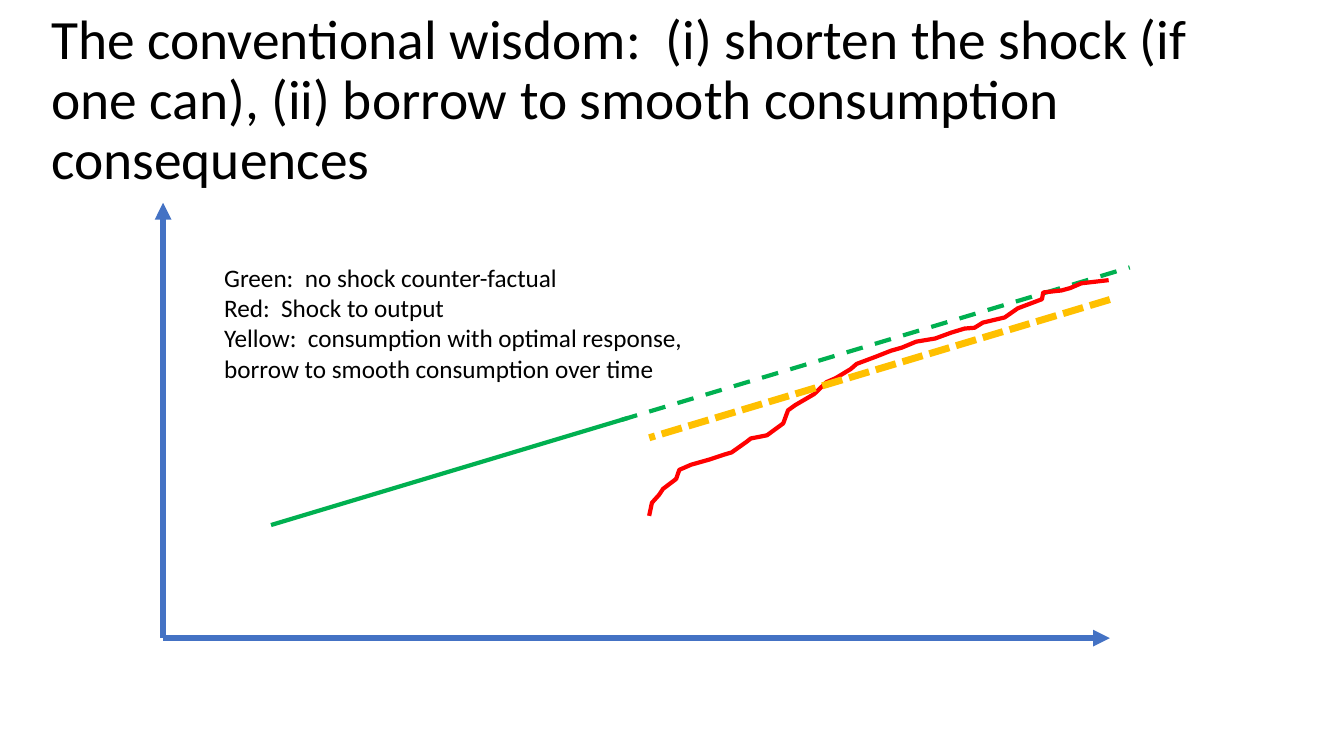
from lxml import etree
from pptx import Presentation, util as u
from pptx.dml.color import RGBColor
from pptx.enum import dml, shapes, text
from pptx.oxml import ns

COLOURS = {"axis": "4472C4", "no_shock": "00B050", "output": "FF0000",
           "consumption": "FFC000", "ink": "000000"}


def style_line(shape, colour, width, dash=None, arrow=False):
    shape.line.color.rgb = RGBColor.from_string(COLOURS[colour])
    shape.line.width = u.Pt(width)
    if dash:
        shape.line.dash_style = dash
    properties = shape._element.spPr
    if arrow:
        stroke = properties.find(ns.qn("a:ln"))
        etree.SubElement(stroke, ns.qn("a:tailEnd"), type="triangle")
    etree.SubElement(properties, ns.qn("a:effectLst"))


def draw_line(page, start, end, *style):
    ends = [u.Cm(value) for value in (*start, *end)]
    line = page.shapes.add_connector(shapes.MSO_CONNECTOR.STRAIGHT, *ends)
    style_line(line, *style)


deck = Presentation()
deck.slide_width, deck.slide_height = u.Cm(33.87), u.Cm(19.05)
page = deck.slides.add_slide(deck.slide_layouts[5])

title = page.shapes.title
title_place = {"left": 1.04, "top": 0.71, "width": 29.21, "height": 3.68}
for name, value in title_place.items():
    setattr(title, name, u.Cm(value))

origin_x, origin_y = 4.11, 16.08
axis_right, axis_top = 27.97, 5.11
for axis_end in [(axis_right, origin_y), (origin_x, axis_top)]:
    draw_line(page, (origin_x, origin_y), axis_end, "axis", 4, None, True)

trend_left, trend_base, trend_rise = 6.83, 13.23, 0.3
solid_end, forecast_start, forecast_end = 15.82, 15.65, 28.47
shock_start, debt_cost = 16.36, 0.66
trend_xs = [trend_left, solid_end, forecast_start, forecast_end,
            shock_start, axis_right]
trend = {x: trend_base - trend_rise * (x - trend_left) for x in trend_xs}

for start_x, end_x, dash in [(trend_left, solid_end, None),
                             (forecast_start, forecast_end, dml.MSO_LINE.DASH)]:
    draw_line(page, (start_x, trend[start_x]), (end_x, trend[end_x]),
              "no_shock", 3, dash)

output_phases = {
    "rebound": [(16.36, 13.00), (16.43, 12.67), (16.61, 12.47), (16.71, 12.32),
                (17.04, 12.07), (17.12, 11.84), (17.42, 11.71)],
    "slow_repair": [(17.88, 11.58), (18.24, 11.46), (18.44, 11.40),
                    (18.82, 11.13), (18.92, 11.05), (19.33, 10.97)],
    "catching_up": [(19.74, 10.67), (19.86, 10.34), (20.04, 10.21),
                    (20.52, 9.93), (20.83, 9.63), (21.06, 9.53),
                    (21.44, 9.30), (21.59, 9.17)],
    "steady_growth": [(22.07, 8.99), (22.45, 8.84), (22.73, 8.76),
                      (23.09, 8.61), (23.57, 8.53), (23.98, 8.38),
                      (24.31, 8.28), (24.56, 8.26), (24.77, 8.13),
                      (25.32, 8.00), (25.65, 7.77)],
    "back_on_trend": [(26.26, 7.54), (26.29, 7.37), (26.75, 7.32),
                      (26.97, 7.26), (27.25, 7.14), (27.94, 7.06)],
}
output_start, *output_rest = [
    (u.Cm(x), u.Cm(y)) for phase in output_phases.values() for x, y in phase]
builder = page.shapes.build_freeform(*output_start)
builder.add_line_segments(output_rest, close=False)
output_curve = builder.convert_to_shape()
output_curve.fill.background()
style_line(output_curve, "output", 3)

draw_line(page, (axis_right, trend[axis_right] + debt_cost),
          (shock_start, trend[shock_start] + debt_cost),
          "consumption", 5, dml.MSO_LINE.SQUARE_DOT)

legend = page.shapes.add_textbox(u.Cm(5.4), u.Cm(6.48), u.Cm(12.19), u.Cm(3.33))

title_lines = ["The conventional wisdom:  (i) shorten the shock (if one can), "
               "(ii) borrow to smooth consumption consequences"]
legend_lines = ["Green:  no shock counter-factual",
                "Red:  Shock to output",
                "Yellow:  consumption with optimal response,",
                "borrow to smooth consumption over time"]
title_format = {"word_wrap": True, "auto_size": text.MSO_AUTO_SIZE.NONE,
                "vertical_anchor": text.MSO_ANCHOR.MIDDLE}
legend_format = {"word_wrap": False,
                 "auto_size": text.MSO_AUTO_SIZE.SHAPE_TO_FIT_TEXT}

for box, wordings, size, spacing, frame_format in [
        (title, title_lines, 39.6, 0.9, title_format),
        (legend, legend_lines, 18, 1.0, legend_format)]:
    frame = box.text_frame
    for name, value in frame_format.items():
        setattr(frame, name, value)
    for index, wording in enumerate(wordings):
        para = frame.add_paragraph() if index else frame.paragraphs[0]
        para.alignment = text.PP_ALIGN.LEFT
        para.line_spacing = spacing
        span = para.add_run()
        span.text = wording
        for name, value in {"name": "Calibri", "size": u.Pt(size)}.items():
            setattr(span.font, name, value)
        span.font.color.rgb = RGBColor.from_string(COLOURS["ink"])

deck.save("out.pptx")
